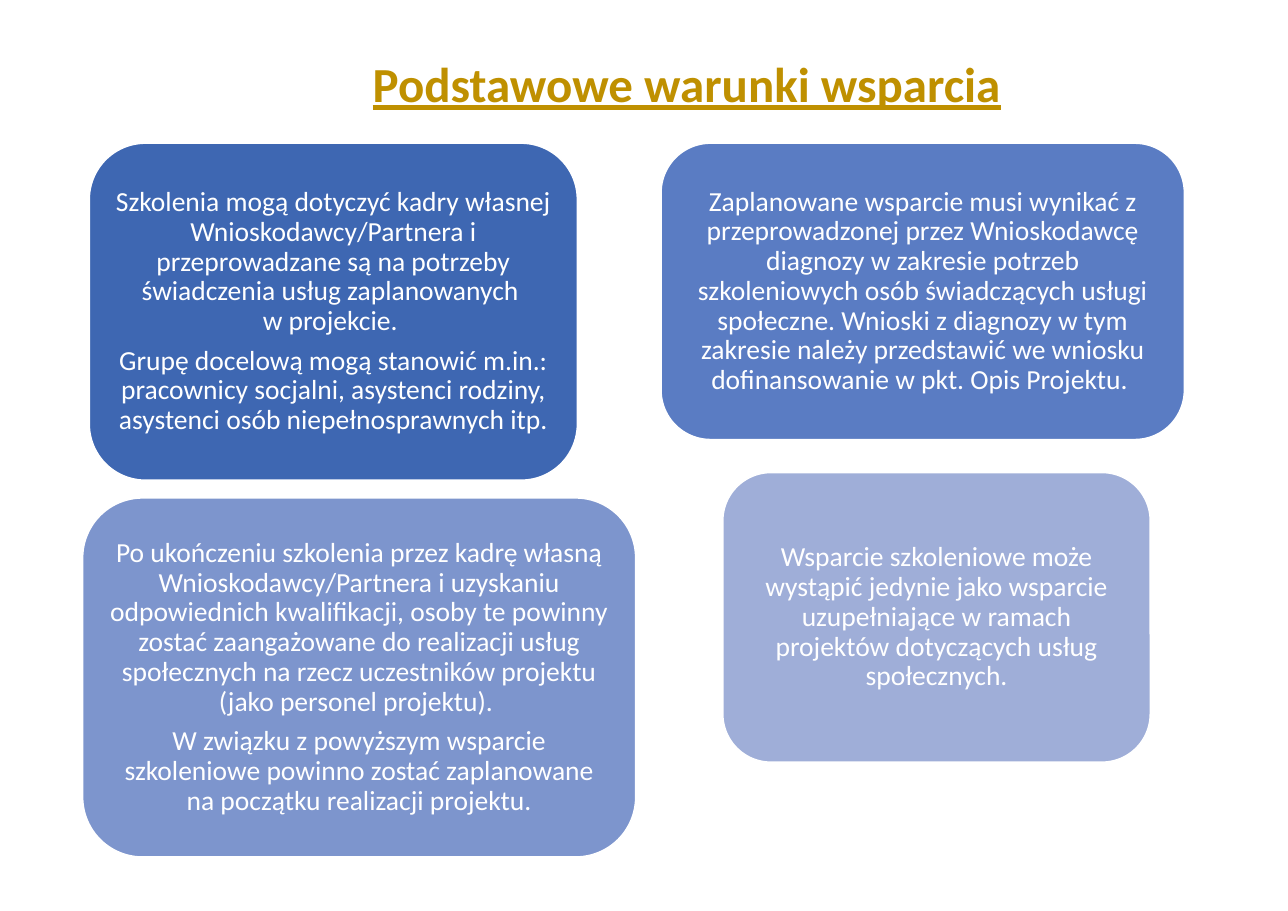
from pptx import Presentation
from pptx.dml.color import RGBColor
from pptx.enum.shapes import MSO_SHAPE
from pptx.enum.text import MSO_ANCHOR, MSO_AUTO_SIZE, PP_ALIGN
from pptx.util import Inches, Pt

ROUNDED = MSO_SHAPE.ROUNDED_RECTANGLE
MIDDLE, BOTTOM = MSO_ANCHOR.MIDDLE, MSO_ANCHOR.BOTTOM
CENTER = PP_ALIGN.CENTER
NO_AUTOFIT = MSO_AUTO_SIZE.NONE
TITLE_ONLY = 5

WHITE, GOLD = "FFFFFF", "BF9000"


def color(hex_string):
    return RGBColor.from_string(hex_string)


def write(frame, *texts, size=18, fill=WHITE, bold=False, underline=False,
          anchor=MIDDLE, gap=0):
    """Fill a text frame with one centred paragraph per text."""
    frame.word_wrap = True
    frame.auto_size = NO_AUTOFIT
    frame.vertical_anchor = anchor
    for index, text in enumerate(texts):
        paragraph = frame.add_paragraph() if index else frame.paragraphs[0]
        paragraph.text = text
        paragraph.alignment = CENTER
        paragraph.line_spacing = 0.9
        paragraph.space_before = Pt(gap if index else 0)
        font = paragraph.font
        font.name, font.size = "Calibri", Pt(size)
        font.bold, font.underline = bold, underline
        font.color.rgb = color(fill)


class SlideBuilder:
    """Places elements by percentages of the slide's width and height."""

    def __init__(self, presentation):
        self.width = presentation.slide_width
        self.height = presentation.slide_height
        layout = presentation.slide_layouts[TITLE_ONLY]
        self.slide = presentation.slides.add_slide(layout)

    def area(self, left, top, width, height):
        return (round(left * self.width / 100), round(top * self.height / 100),
                round(width * self.width / 100), round(height * self.height / 100))

    def title(self, area, text):
        shape = self.slide.shapes.title
        shape.left, shape.top, shape.width, shape.height = self.area(*area)
        write(shape.text_frame, text, size=32, fill=GOLD, bold=True,
              underline=True, anchor=BOTTOM)

    def card(self, area, fill, *texts):
        shape = self.slide.shapes.add_shape(ROUNDED, *self.area(*area))
        shape.shadow.inherit = False
        shape.fill.solid()
        shape.fill.fore_color.rgb = color(fill)
        shape.line.color.rgb = color(WHITE)
        shape.line.width = Pt(1)
        frame = shape.text_frame
        frame.margin_left = frame.margin_right = Inches(0.07)
        frame.margin_top = frame.margin_bottom = Inches(0.07)
        write(frame, *texts, gap=6.5)


# Area (left, top, width, height in percent), fill and paragraphs of each card
CONDITIONS = [
    ((6.93, 15.72, 37.9, 37), "3E67B2",
     "Szkolenia mogą dotyczyć kadry własnej Wnioskodawcy/Partnera i "
     "przeprowadzane są na potrzeby świadczenia usług zaplanowanych \v"
     "w projekcie. ",
     "Grupę docelową mogą stanowić m.in.: pracownicy socjalni, asystenci "
     "rodziny, asystenci osób niepełnosprawnych itp."),
    ((51.33, 15.72, 40.63, 32.53), "5A7CC3",
     "Zaplanowane wsparcie musi wynikać z przeprowadzonej przez Wnioskodawcę "
     "diagnozy w zakresie potrzeb szkoleniowych osób świadczących usługi "
     "społeczne. Wnioski z diagnozy w tym zakresie należy przedstawić we "
     "wniosku dofinansowanie w pkt. Opis Projektu. "),
    ((6.42, 54.66, 42.94, 39.42), "7D95CD",
     "Po ukończeniu szkolenia przez kadrę własną Wnioskodawcy/Partnera i "
     "uzyskaniu odpowiednich kwalifikacji, osoby te powinny zostać "
     "zaangażowane do realizacji usług społecznych na rzecz uczestników "
     "projektu (jako personel projektu). ",
     "W związku z powyższym wsparcie szkoleniowe powinno zostać zaplanowane "
     "na początku realizacji projektu."),
    ((56.12, 51.87, 33.19, 31.8), "9FAED8",
     "Wsparcie szkoleniowe może wystąpić jedynie jako wsparcie uzupełniające "
     "w ramach projektów dotyczących usług społecznych."),
]


def main():
    presentation = Presentation()
    presentation.slide_width = Inches(11.69)
    presentation.slide_height = Inches(8.27)
    builder = SlideBuilder(presentation)

    # Heading
    builder.title((19.67, 6.77, 67.32, 6.29), "Podstawowe warunki wsparcia")

    # Four condition cards
    for area, fill, *texts in CONDITIONS:
        builder.card(area, fill, *texts)

    presentation.save("out.pptx")


if __name__ == "__main__":
    main()
